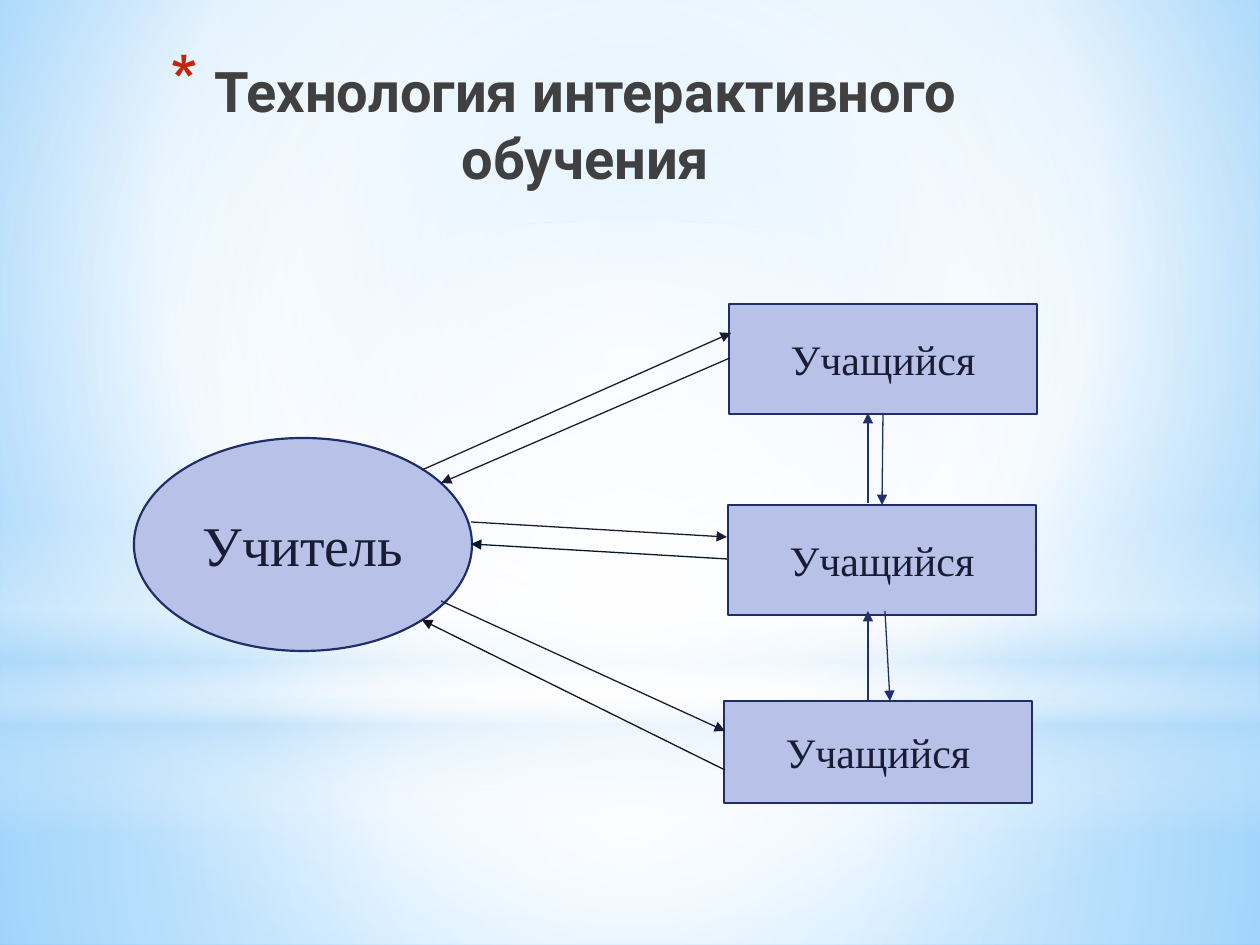
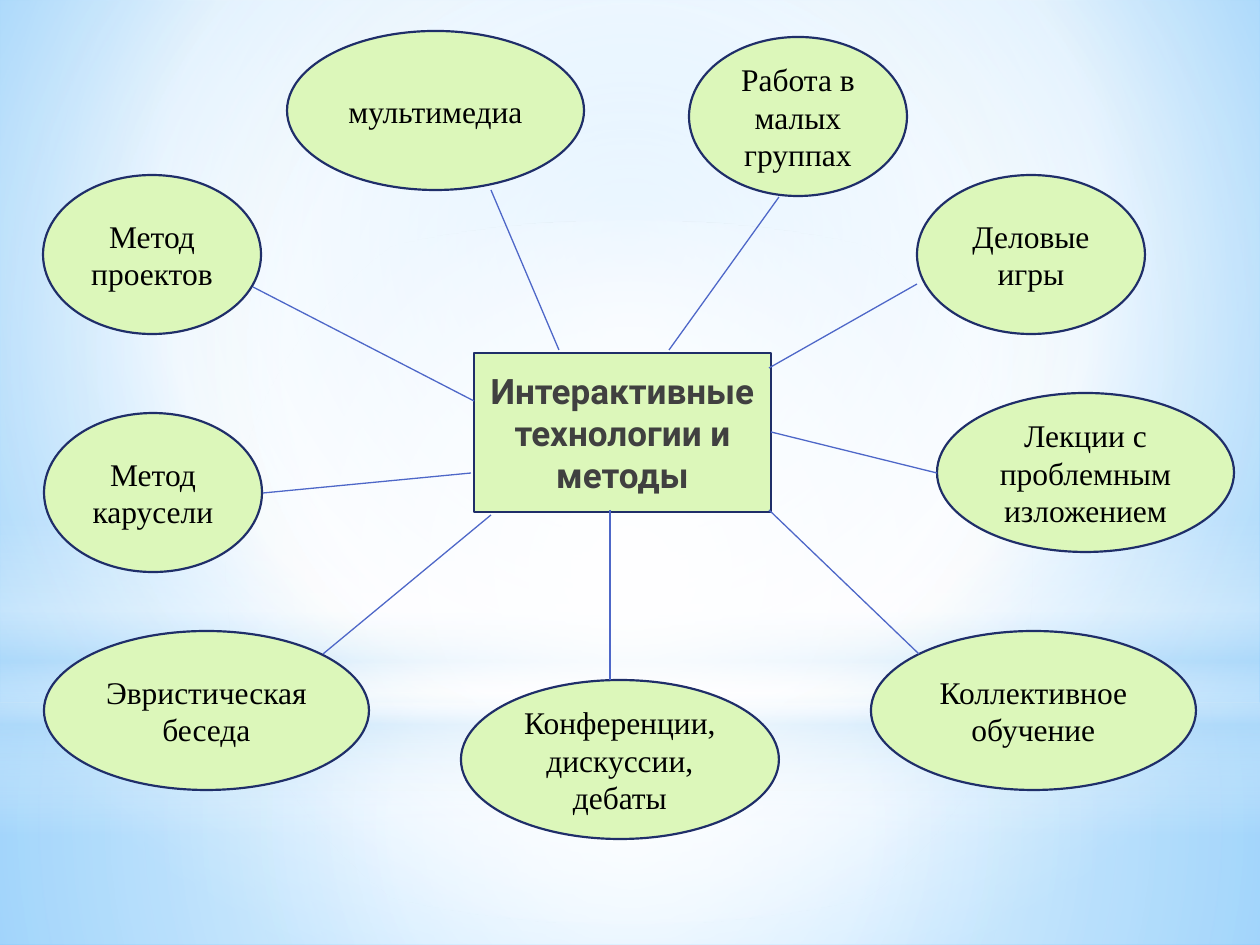
import pptx
import pptx.util
import pptx.dml.color
import pptx.enum.shapes
import pptx.enum.text
import pptx.oxml
import pptx.oxml.ns
import lxml.etree

RGB = pptx.dml.color.RGBColor
KIND = pptx.enum.shapes.MSO_SHAPE
ALIGN = pptx.enum.text.PP_ALIGN
ANCHOR = pptx.enum.text.MSO_ANCHOR
qn = pptx.oxml.ns.qn

# Shared look
SCALE = 914400 / 126
WIDE, HIGH = 1260, 945
SERIF, SANS = "Times New Roman", "Roboto"
EDGE = RGB(0x1F, 0x2E, 0x69)
LILAC = RGB(0xB8, 0xC2, 0xE9)
LIME = RGB(0xDC, 0xF7, 0xBA)
INK = RGB(0x19, 0x1D, 0x34)
DARK = RGB(0x11, 0x14, 0x22)
DEEP = RGB(0x03, 0x18, 0x28)
NAVY = RGB(0x21, 0x30, 0x6A)
BLUE = RGB(0x4E, 0x67, 0xC8)
GREY = RGB(0x40, 0x40, 0x40)
BLACK = RGB(0, 0, 0)
RED = RGB(0xC3, 0x26, 0x0C)
WHITE = RGB(0xFF, 0xFF, 0xFF)
PALE = RGB(0xB4, 0xDC, 0xFA)
SKY = RGB(0x9E, 0xD5, 0xFF)
AZURE = RGB(0x5B, 0xB9, 0xFF)

MID = (50, 50, 50, 50)
# Backdrop parts: shape, box, stops (place, colour, opacity), centre or None
BANDS = [
    (KIND.RECTANGLE, (0, 703, WIDE, 242),
     [(0, WHITE, 91), (37, WHITE, 76), (100, PALE, 79)], MID),
    (KIND.RECTANGLE, (0, 0, WIDE, 703),
     [(0, WHITE, 89), (48, WHITE, 62), (100, PALE, 79)], MID),
    (KIND.RECTANGLE, (0, 519, WIDE, 315),
     [(0, WHITE, 0), (29, WHITE, 30), (45, PALE, 40),
      (55, WHITE, 26), (65, PALE, 60), (100, WHITE, 0)], None),
    (KIND.OVAL, (0, 221, WIDE, 703),
     [(0, WHITE, 100), (56, WHITE, 0)], MID),
]

# Parts of the teaching scheme, measured from its box
PUPILS = [(595, 0, 308, 110), (594, 201, 308, 110), (590, 397, 308, 102)]
TUTOR = (0, 134, 338, 213)
ARROWS = [
    (NAVY, (734, 199, 734, 109)), (NAVY, (734, 397, 734, 307)),
    (NAVY, (749, 109, 748, 201)), (NAVY, (751, 307, 756, 397)),
    (DARK, (591, 466, 288, 316)), (DEEP, (593, 255, 337, 240)),
    (INK, (596, 54, 307, 179)), (INK, (288, 166, 597, 29)),
    (INK, (337, 218, 593, 233)), (INK, (307, 297, 591, 427)),
]

# Methods: text, left, top, width, spoke; measured from the box of the map
METHODS = [
    ("Метод проектов", 0, 144, 218, (431, 370, 210, 256)),
    ("мультимедиа", 244, 0, 297, (516, 319, 448, 159)),
    ("Работа в малых группах", 646, 6, 218, (626, 319, 736, 166)),
    ("Деловые игры", 874, 144, 228, (726, 337, 874, 253)),
    ("Лекции с проблемным изложением", 894, 362, 297, (728, 401, 894, 442)),
    ("Коллективное обучение", 828, 600, 325, (726, 479, 876, 623)),
    ("Конференции, дискуссии, дебаты", 418, 649, 318, (567, 479, 567, 649)),
    ("Эвристическая беседа", 1, 600, 325, (448, 484, 280, 623)),
    ("Метод карусели", 1, 382, 218, (428, 442, 220, 462)),
]
TALL = 159


def px(*nums):
    return [pptx.util.Emu(round(n * SCALE)) for n in nums]


def shift(base, box):
    """Move a box from region to slide coordinates."""
    return (base[0] + box[0], base[1] + box[1], *box[2:])


def blend(fill, root, stops, focus):
    """Give a fill a many-stop gradient, round or downward."""
    fill.gradient()
    grad = root.xpath(".//a:gradFill")[0]
    for kid in list(grad):
        grad.remove(kid)
    rows = lxml.etree.SubElement(grad, qn("a:gsLst"))
    for place, tint, clear in stops:
        stop = lxml.etree.SubElement(rows, qn("a:gs"), pos=str(place * 1000))
        tone = lxml.etree.SubElement(stop, qn("a:srgbClr"), val=str(tint))
        if clear < 100:
            lxml.etree.SubElement(tone, qn("a:alpha"), val=str(clear * 1000))
    if focus:
        way = lxml.etree.SubElement(grad, qn("a:path"), {"path": "circle"})
        sides = {k: str(v * 1000) for k, v in zip("ltrb", focus)}
        lxml.etree.SubElement(way, qn("a:fillToRect"), sides)
    else:
        lxml.etree.SubElement(grad, qn("a:lin"), ang="5400000", scaled="0")


def backdrop(deck, slide):
    """Paint the master: the bands are drawn on a slide, then moved."""
    master = deck.slide_master
    blend(master.background.fill, master.element.cSld,
          [(0, SKY, 100), (60, WHITE, 100), (100, AZURE, 100)],
          (20, 10, 20, 60))
    for num, (kind, box, stops, focus) in enumerate(BANDS):
        band = slide.shapes.add_shape(kind, *px(*box))
        band.shadow.inherit = False
        band.line.fill.background()
        blend(band.fill, band.element.spPr, stops, focus)
        band.element.nvSpPr.cNvPr.set("id", str(100 + num))
        master.shapes.element.insert(2 + num, band.element)


def style(frame, text, size, face, tint, bold=False):
    frame.word_wrap = True
    frame.vertical_anchor = ANCHOR.MIDDLE
    para = frame.paragraphs[0]
    para.text = text
    para.alignment = ALIGN.CENTER
    font = para.font
    font.size, font.name, font.bold = pptx.util.Pt(size), face, bold
    font.color.rgb = tint
    return para


def node(slide, kind, box, fill, *text):
    shape = slide.shapes.add_shape(kind, *px(*box))
    shape.shadow.inherit = False
    shape.fill.solid()
    shape.fill.fore_color.rgb = fill
    shape.line.color.rgb = EDGE
    shape.line.width = pptx.util.Pt(1.25)
    style(shape.text_frame, *text)


def link(slide, base, ends, tint, arrow=False):
    x, y = base[:2]
    x1, y1, x2, y2 = ends
    line = slide.shapes.add_connector(
        pptx.enum.shapes.MSO_CONNECTOR.STRAIGHT,
        *px(x + x1, y + y1, x + x2, y + y2))
    line.line.color.rgb = tint
    line.line.width = pptx.util.Pt(0.75)
    props = line.element.spPr
    if arrow:
        lxml.etree.SubElement(props.find(qn("a:ln")), qn("a:tailEnd"),
                              type="triangle")
    lxml.etree.SubElement(props, qn("a:effectLst"))


def heading(slide, box, text):
    """Title with a red star as its bullet."""
    title = slide.shapes.title
    title.left, title.top, title.width, title.height = px(*box)
    para = style(title.text_frame, text, 32, SANS, GREY, True)
    props = para._p.get_or_add_pPr()
    dent = px(44)[0]
    props.set("marL", str(dent))
    props.set("indent", str(-dent))
    marks = [lxml.etree.Element(qn("a:buClr")),
             lxml.etree.Element(qn("a:buSzPct"), val="128000"),
             lxml.etree.Element(qn("a:buChar"), char="*")]
    lxml.etree.SubElement(marks[0], qn("a:srgbClr"), val=str(RED))
    for spot, mark in enumerate(marks):
        props.insert(len(props) - 1 if props.find(qn("a:defRPr")) is not None
                     else spot, mark)


def scheme(slide, box):
    """Teacher and pupils, joined by arrows both ways."""
    for part in PUPILS:
        node(slide, KIND.RECTANGLE, shift(box, part), LILAC,
             "Учащийся", 24, SERIF, INK)
    node(slide, KIND.OVAL, shift(box, TUTOR), LILAC,
         "Учитель", 32, SERIF, INK)
    for tint, ends in ARROWS:
        link(slide, box, ends, tint, True)


def mind_map(slide, box):
    """Hub in the middle, methods around it."""
    node(slide, KIND.RECTANGLE, shift(box, (431, 322, 297, TALL)), LIME,
         "Интерактивные технологии и методы", 20, SANS, GREY, True)
    for text, left, top, wide, spoke in METHODS:
        node(slide, KIND.OVAL, shift(box, (left, top, wide, TALL)), LIME,
             text, 18, SERIF, BLACK)
        link(slide, box, spoke, BLUE)


def main():
    deck = pptx.Presentation()
    deck.slide_width, deck.slide_height = px(WIDE, HIGH)

    first = deck.slides.add_slide(deck.slide_layouts[5])
    backdrop(deck, first)
    heading(first, (115, 45, 897, 158), "Технология интерактивного обучения")
    scheme(first, (134, 304, 903, 499))

    second = deck.slides.add_slide(deck.slide_layouts[6])
    mind_map(second, (43, 31, 1192, 808))
    deck.save("out.pptx")


if __name__ == "__main__":
    main()
